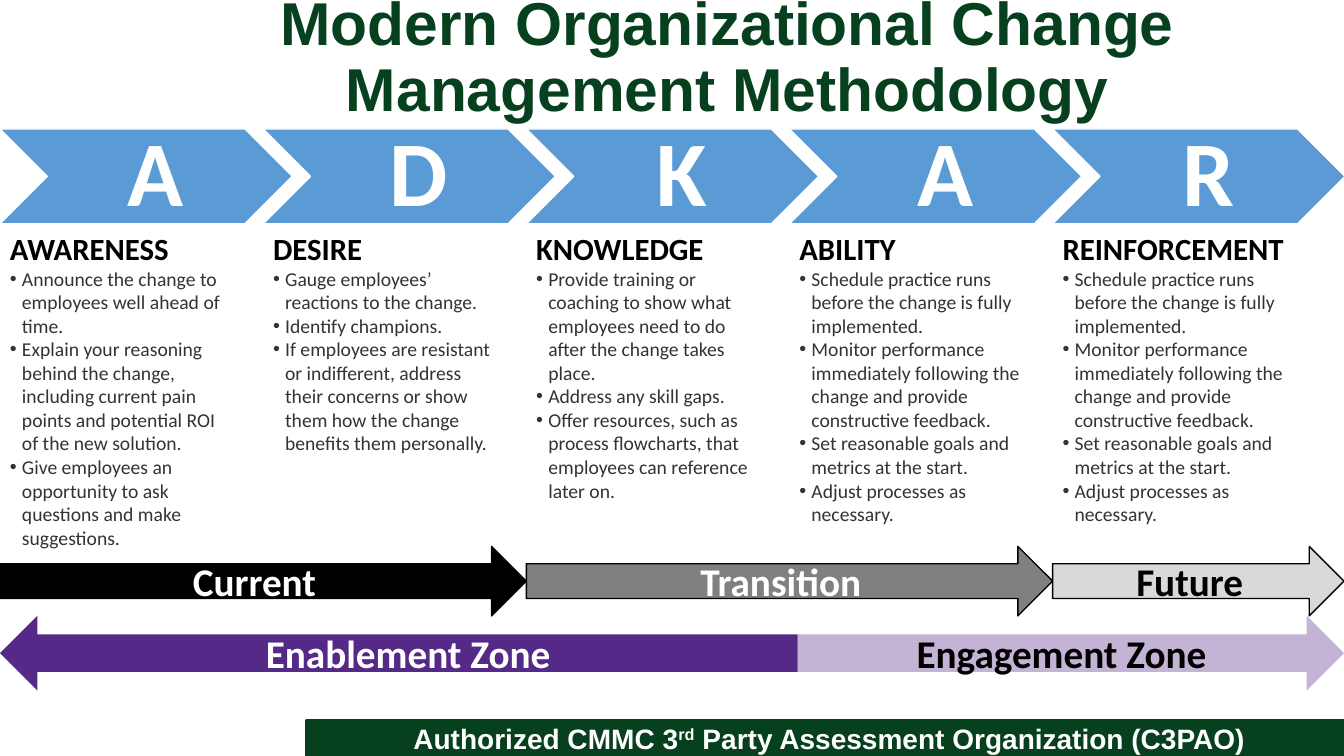
"""Build a slide on the five steps of a change management methodology."""
from pptx import Presentation
from pptx.dml.color import RGBColor
from pptx.enum.shapes import MSO_SHAPE
from pptx.enum.text import MSO_ANCHOR, MSO_AUTO_SIZE, PP_ALIGN
from pptx.oxml.ns import qn
from pptx.util import Inches, Pt
from lxml import etree

RECTANGLE, CHEVRON = MSO_SHAPE.RECTANGLE, MSO_SHAPE.CHEVRON
RIGHT, LEFT = MSO_SHAPE.RIGHT_ARROW, MSO_SHAPE.LEFT_ARROW
MIDDLE, CENTER = MSO_ANCHOR.MIDDLE, PP_ALIGN.CENTER
NO_FIT = MSO_AUTO_SIZE.NONE

WHITE, BLACK, GREEN, BLUE, PURPLE = "FFFFFF", "000000", "06401E", "5B9BD5", "552988"
BODY_GRAY = "333333"

TITLE = "Modern Organizational Change Management Methodology"
FOOTER = [("Authorized CMMC 3", False), ("rd", True),
          (" Party Assessment Organization (C3PAO)", False)]
PRACTICE = [
    "Schedule practice runs before the change is fully implemented.",
    "Monitor performance immediately following the change and provide constructive feedback.",
    "Set reasonable goals and metrics at the start.",
    "Adjust processes as necessary.",
]
STEPS = [
    ("AWARENESS", [
        "Announce the change to employees well ahead of time.",
        "Explain your reasoning behind the change, including current pain points "
        "and potential ROI of the new solution.",
        "Give employees an opportunity to ask questions and make suggestions."]),
    ("DESIRE", [
        "Gauge employees’ reactions to the change.",
        "Identify champions.",
        "If employees are resistant or indifferent, address their concerns or show "
        "them how the change benefits them personally."]),
    ("KNOWLEDGE", [
        "Provide training or coaching to show what employees need to do after the "
        "change takes place.",
        "Address any skill gaps.",
        "Offer resources, such as process flowcharts, that employees can reference "
        "later on."]),
    ("ABILITY", PRACTICE),
    ("REINFORCEMENT", PRACTICE),
]

WIDTH, HEIGHT = 13.33, 7.5
COLUMN = 2.61
CHEVRON_WIDTH, TEXT_WIDTH = 2.9, 2.43
CHEVRON_TOP, TEXT_TOP, PHASE_TOP, ZONE_TOP, FOOTER_TOP = 1.28, 2.23, 5.42, 6.11, 7.14
CHEVRON_HEIGHT, TEXT_HEIGHT, PHASE_HEIGHT, ZONE_HEIGHT = 0.94, 3.3, 0.69, 0.74
ZONE_SPLIT = 7.91

PHASES = [("Current", 0, 2 * COLUMN, BLACK, WHITE),
          ("Transition", 2 * COLUMN, 4 * COLUMN, "808080", WHITE),
          ("Future", 4 * COLUMN, WIDTH, "D9D9D9", BLACK)]
ZONES = [("Enablement Zone", LEFT, 0, ZONE_SPLIT, WHITE, None),
         ("Engagement Zone", RIGHT, ZONE_SPLIT, WIDTH, BLACK, 35)]


def color(value):
    return RGBColor.from_string(value)


def add_span(para, text, size, ink, bold=True, font="Calibri"):
    span = para.add_run()
    span.text = text
    span.font.name, span.font.size, span.font.bold = font, Pt(size), bold
    span.font.color.rgb = color(ink)
    return span


def add_block(page, kind, left, top, width, height, fill, line=None, weight=1):
    block = page.shapes.add_shape(kind, Inches(left), Inches(top), Inches(width), Inches(height))
    block.shadow.inherit = False
    block.fill.solid()
    block.fill.fore_color.rgb = color(fill)
    if line:
        block.line.color.rgb = color(line)
        block.line.width = Pt(weight)
    else:
        block.line.fill.background()
    block.text_frame.word_wrap = True
    block.text_frame.vertical_anchor = MIDDLE
    block.text_frame.paragraphs[0].alignment = CENTER
    return block


def set_opacity(block, percent):
    tint = block.fill._xPr.find(qn("a:solidFill"))[0]
    etree.SubElement(tint, qn("a:alpha"), val=str(percent * 1000))


def add_bullet(para):
    properties = para._p.get_or_add_pPr()
    properties.set("marL", str(Inches(0.12)))
    properties.set("indent", str(Inches(-0.12)))
    etree.SubElement(properties, qn("a:buFont"), typeface="Arial")
    etree.SubElement(properties, qn("a:buChar"), char="•")


def add_title(page):
    title = page.shapes.title
    title.left, title.top = Inches(1.1), 0
    title.width, title.height = Inches(WIDTH - 1.1), Inches(1.17)
    frame = title.text_frame
    frame.word_wrap, frame.auto_size, frame.vertical_anchor = True, NO_FIT, MIDDLE
    para = frame.paragraphs[0]
    para.alignment, para.line_spacing = CENTER, 0.9
    add_span(para, TITLE, 43.2, GREEN, font="Arial")


def add_footer(page):
    for left in (3.04, 3.12):
        bar = add_block(page, RECTANGLE, left, FOOTER_TOP, WIDTH - left,
                        HEIGHT - FOOTER_TOP, GREEN, GREEN, 1.5)
    for text, raised in FOOTER:
        span = add_span(bar.text_frame.paragraphs[0], text, 20, WHITE, font="Arial")
        if raised:
            span.font._element.set("baseline", "30000")


def add_step(page, left, heading, points):
    chevron = add_block(page, CHEVRON, left, CHEVRON_TOP, CHEVRON_WIDTH, CHEVRON_HEIGHT,
                        BLUE, WHITE)
    frame = chevron.text_frame
    frame.margin_left = Inches(0.29)
    frame.margin_top = frame.margin_right = frame.margin_bottom = Inches(0.1)
    frame.paragraphs[0].line_spacing = 0.9
    add_span(frame.paragraphs[0], heading[0], 66, WHITE)

    box = page.shapes.add_textbox(Inches(left), Inches(TEXT_TOP),
                                  Inches(TEXT_WIDTH), Inches(TEXT_HEIGHT))
    box.text_frame.word_wrap = True
    add_span(box.text_frame.paragraphs[0], heading, 22, BLACK)
    for point in points:
        para = box.text_frame.add_paragraph()
        add_bullet(para)
        add_span(para, point, 14, BODY_GRAY, bold=False)


def main():
    deck = Presentation()
    deck.slide_width, deck.slide_height = Inches(WIDTH), Inches(HEIGHT)
    page = deck.slides.add_slide(deck.slide_layouts[5])
    add_footer(page)
    add_title(page)
    for index, (heading, points) in enumerate(STEPS):
        add_step(page, index * COLUMN, heading, points)
    for label, start, end, fill, ink in PHASES:
        arrow = add_block(page, RIGHT, start, PHASE_TOP, end - start, PHASE_HEIGHT, fill, BLACK)
        add_span(arrow.text_frame.paragraphs[0], label, 28, ink)
    for label, kind, start, end, ink, opacity in ZONES:
        arrow = add_block(page, kind, start, ZONE_TOP, end - start, ZONE_HEIGHT, PURPLE)
        if opacity:
            set_opacity(arrow, opacity)
        add_span(arrow.text_frame.paragraphs[0], label, 28, ink)
    deck.save("out.pptx")


if __name__ == "__main__":
    main()
